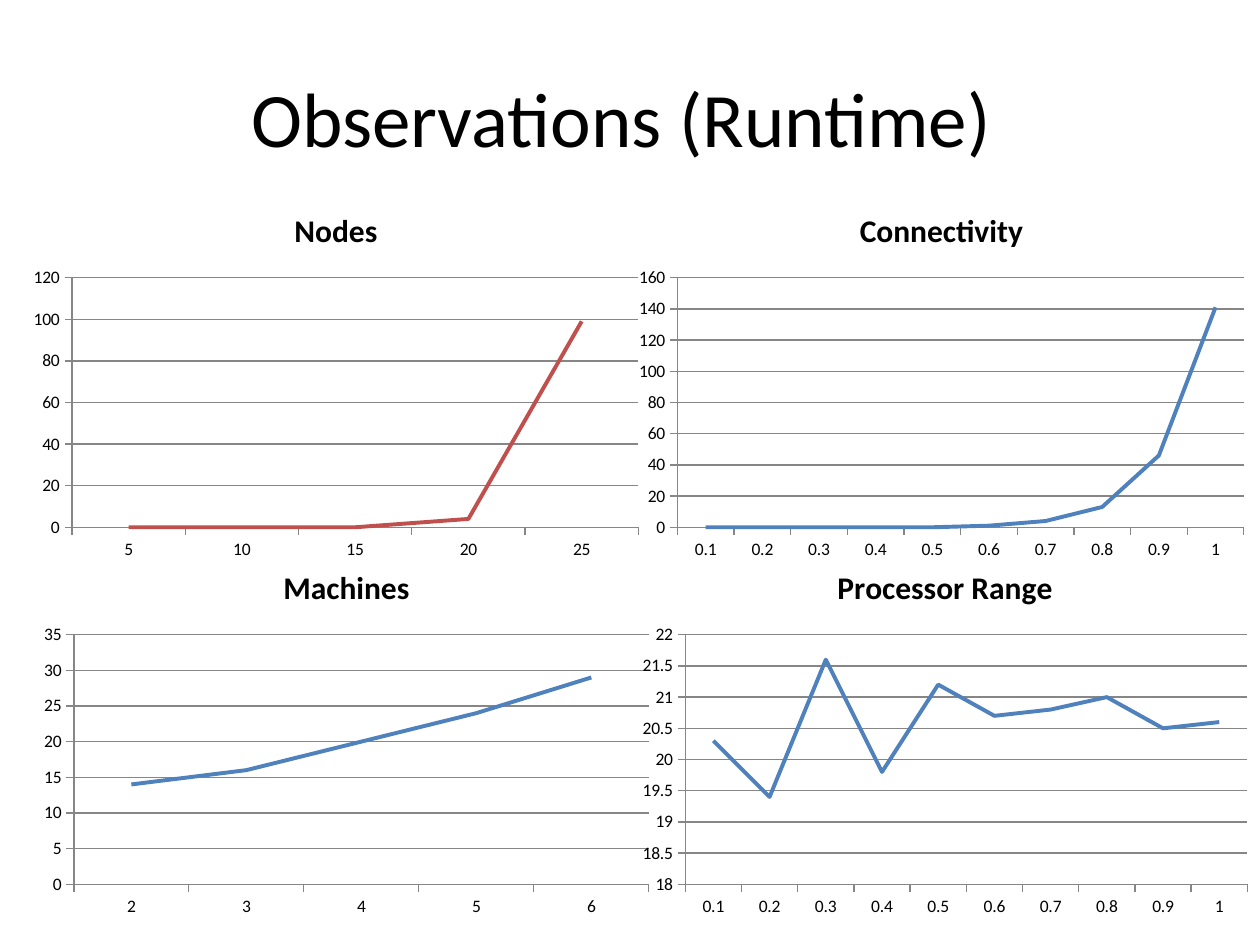
import pptx
import pptx.chart.data
import pptx.dml.color
import pptx.enum.chart
import pptx.enum.text
import pptx.util

Pt = pptx.util.Pt
RGBColor = pptx.dml.color.RGBColor

BLACK = RGBColor(0x00, 0x00, 0x00)
GREY = RGBColor(0x86, 0x86, 0x86)
RED = RGBColor(0xC0, 0x50, 0x4D)
BLUE = RGBColor(0x4F, 0x81, 0xBD)
FACE = "Calibri"
WIDTH, HEIGHT = 360, 216
TENTHS = ["0.1", "0.2", "0.3", "0.4", "0.5", "0.6", "0.7", "0.8", "0.9", "1"]

# title, left, top, colour, (axis low, high, step), categories, values
CHARTS = [
    ("Nodes", 12, 108, RED, (0, 120, 20),
     ["5", "10", "15", "20", "25"], [0, 0, 0, 4, 99]),
    ("Connectivity", 358, 108, BLUE, (0, 160, 20),
     TENTHS, [0, 0, 0, 0, 0, 1, 4, 13, 46, 141]),
    ("Machines", 18, 312, BLUE, (0, 35, 5),
     ["2", "3", "4", "5", "6"], [14, 16, 20, 24, 29]),
    ("Processor Range", 360, 312, BLUE, (18, 22, 0.5),
     TENTHS, [20.3, 19.4, 21.6, 19.8, 21.2, 20.7, 20.8, 21, 20.5, 20.6]),
]


def set_font(font, size, bold=False):
    font.name = FACE
    font.size = Pt(size)
    font.bold = bold
    font.color.rgb = BLACK


def set_line(line, color, width):
    line.color.rgb = color
    line.width = Pt(width)


def fill_title(slide, text):
    title = slide.shapes.title
    title.left, title.top = Pt(36), Pt(21.6)
    title.width, title.height = Pt(648), Pt(90)
    frame = title.text_frame
    frame.text = text
    frame.vertical_anchor = pptx.enum.text.MSO_ANCHOR.MIDDLE
    para = frame.paragraphs[0]
    para.alignment = pptx.enum.text.PP_ALIGN.CENTER
    set_font(para.font, 44)


def style_axes(chart, scale):
    for axis in (chart.category_axis, chart.value_axis):
        axis.major_tick_mark = pptx.enum.chart.XL_TICK_MARK.OUTSIDE
        axis.minor_tick_mark = pptx.enum.chart.XL_TICK_MARK.NONE
        set_line(axis.format.line, GREY, 0.75)
    axis = chart.value_axis
    axis.minimum_scale, axis.maximum_scale, axis.major_unit = scale
    axis.has_major_gridlines = True
    set_line(axis.major_gridlines.format.line, GREY, 0.75)
    axis.tick_labels.number_format = "General"
    axis.tick_labels.number_format_is_linked = False


def add_plot(slide, name, left, top, color, scale, cats, vals):
    data = pptx.chart.data.CategoryChartData()
    data.categories = cats
    data.add_series("Series 1", vals)
    chart = slide.shapes.add_chart(
        pptx.enum.chart.XL_CHART_TYPE.LINE,
        Pt(left), Pt(top), Pt(WIDTH), Pt(HEIGHT), data).chart
    set_font(chart.font, 10)
    chart.has_legend = False
    chart.has_title = True
    chart.chart_title.include_in_layout = False
    frame = chart.chart_title.text_frame
    frame.text = name
    set_font(frame.paragraphs[0].font, 18, True)
    style_axes(chart, scale)
    plot = chart.plots[0]
    plot.vary_by_categories = False
    series = plot.series[0]
    series.smooth = False
    series.marker.style = pptx.enum.chart.XL_MARKER_STYLE.NONE
    set_line(series.format.line, color, 2.25)


def main():
    deck = pptx.Presentation()
    deck.slide_width, deck.slide_height = Pt(720), Pt(540)
    slide = deck.slides.add_slide(deck.slide_layouts[5])
    fill_title(slide, "Observations (Runtime) ")
    for chart in CHARTS:
        add_plot(slide, *chart)
    deck.save("out.pptx")


if __name__ == "__main__":
    main()
